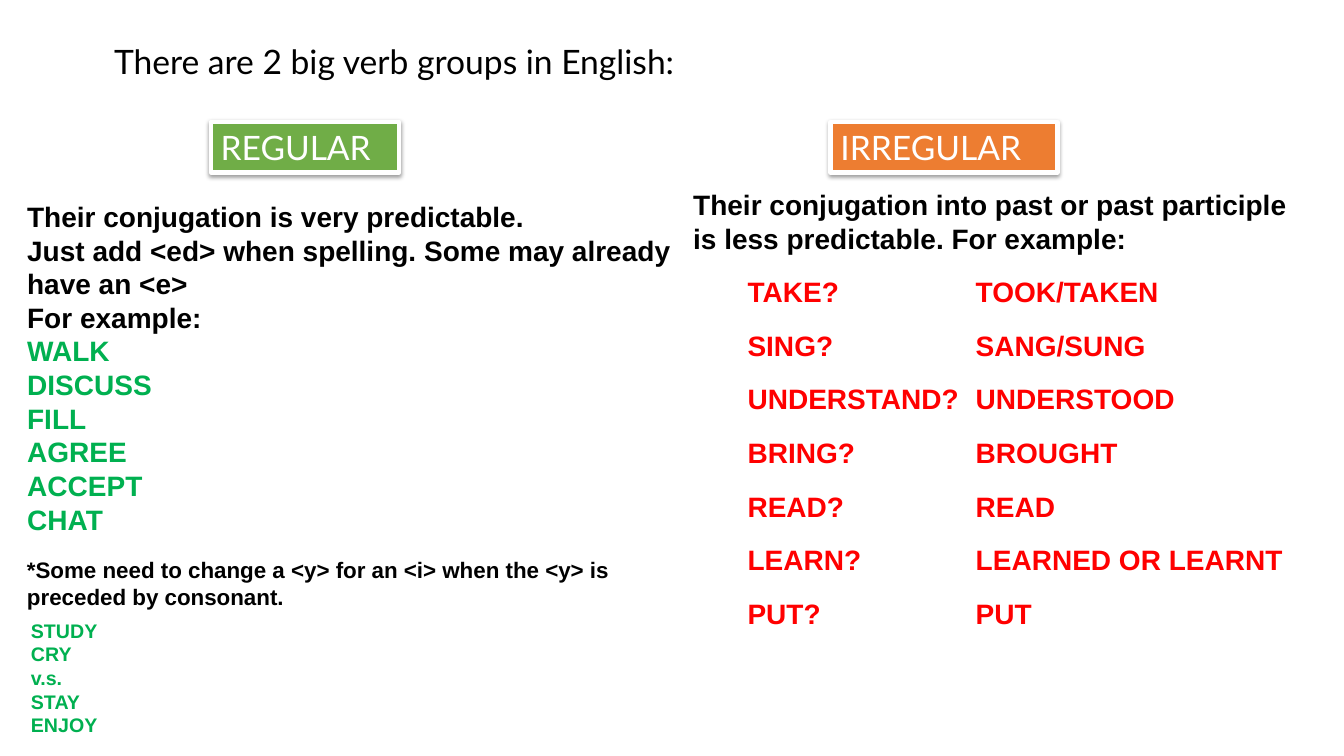
from lxml.etree import SubElement as Sub
from pptx import Presentation
from pptx.dml.color import RGBColor as Rgb
from pptx.enum.shapes import MSO_SHAPE as Kind
from pptx.enum.text import MSO_ANCHOR as Anchor, MSO_AUTO_SIZE as Auto, PP_ALIGN as Align
from pptx.oxml.ns import qn
from pptx.util import Cm, Pt

BLACK, WHITE, RED, GREEN = "000000", "FFFFFF", "FF0000", "00B050"

RULES = [
    "Their conjugation is very predictable.",
    "Just add <ed> when spelling. Some may already have an <e>",
    "For example:",
]
VERBS = ["WALK", "DISCUSS", "FILL", "AGREE", "ACCEPT", "CHAT"]
ENDINGS = ["STUDY", "CRY", "v.s.", "STAY", "ENJOY"]
PAIRS = [
    ("TAKE?", 3.58, "TOOK/TAKEN", 5.23),
    ("SING?", 3.35, "SANG/SUNG", 4.95),
    ("UNDERSTAND?", 6.6, "UNDERSTOOD", 5.92),
    ("BRING?", 3.35, "BROUGHT", 4.95),
    ("READ?", 3.58, "READ", 5.23),
    ("LEARN?", 3.96, "LEARNED OR LEARNT", 8.74),
    ("PUT?", 3.58, "PUT", 5.23),
]


def tint(color):
    return Rgb.from_string(color)


def place(shape, box):
    shape.left, shape.top, shape.width, shape.height = map(Cm, box)


def write(shape, lines, size, face="Arial", bold=True, wrap=True):
    frame = shape.text_frame
    frame.word_wrap = wrap
    frame.auto_size = Auto.SHAPE_TO_FIT_TEXT
    frame.vertical_anchor = Anchor.TOP
    frame.text = "\n".join(text for text, _ in lines)
    for para, (_, color) in zip(frame.paragraphs, lines):
        para.alignment = Align.LEFT
        para.space_before = Pt(0)
        props = para._p.get_or_add_pPr()
        props.set("marL", "0")
        props.set("indent", "0")
        Sub(props, qn("a:buNone"))
        font = para.font
        font.name, font.size, font.bold = face, Pt(size), bold
        font.color.rgb = tint(color)


def add_text(slide, box, lines, size):
    shape = slide.shapes.add_textbox(*map(Cm, box))
    write(shape, lines, size)


def add_shade(shape):
    effects = Sub(shape._element.spPr, qn("a:effectLst"))
    shade = Sub(effects, qn("a:outerShdw"), blurRad=str(Pt(3.1)),
                dist=str(Pt(1.6)), dir="5400000", rotWithShape="0")
    color = Sub(shade, qn("a:srgbClr"), val=BLACK)
    Sub(color, qn("a:alpha"), val="38000")


def add_label(slide, box, text, fill):
    shape = slide.shapes.add_shape(Kind.RECTANGLE, *map(Cm, box))
    shape.fill.solid()
    shape.fill.fore_color.rgb = tint(fill)
    shape.line.color.rgb = tint(WHITE)
    shape.line.width = Pt(3)
    add_shade(shape)
    write(shape, [(text, WHITE)], 24, "Lato", False, False)


def add_pairs(slide):
    for row, (base, wide, past, span) in enumerate(PAIRS):
        top = 6.8 + 1.35 * row
        add_text(slide, (18.59, top, wide, 1.11), [(base, RED)], 20)
        add_text(slide, (24.34, top, span, 1.11), [(past, RED)], 20)


def main():
    deck = Presentation()
    deck.slide_width, deck.slide_height = Cm(33.87), Cm(19.05)
    slide = deck.slides.add_slide(deck.slide_layouts[1])
    title, body = slide.placeholders

    place(title, (2.62, 0.91, 17.27, 1.28))
    write(title, [("There are 2 big verb groups in English:", BLACK)],
          24, "Lato", False, False)
    add_label(slide, (5.31, 3.07, 4.75, 1.28), "REGULAR", "70AD47")
    add_label(slide, (20.93, 3.07, 5.72, 1.28), "IRREGULAR", "ED7D31")

    add_text(slide, (17.22, 4.6, 16.2, 1.96),
             [("Their conjugation into past or past participle "
               "is less predictable. For example:", BLACK)], 20)
    add_pairs(slide)

    place(body, (0.43, 4.9, 16.79, 8.81))
    write(body, [(rule, BLACK) for rule in RULES]
          + [(verb, GREEN) for verb in VERBS], 20)
    add_text(slide, (0.43, 13.89, 16.79, 1.63),
             [("*Some need to change a <y> for an <i> when the <y> is "
               "preceded by consonant.", BLACK)], 16)
    add_text(slide, (0.53, 15.47, 14.3, 3.25),
             [(verb, GREEN) for verb in ENDINGS], 14)
    deck.save("out.pptx")


if __name__ == "__main__":
    main()
